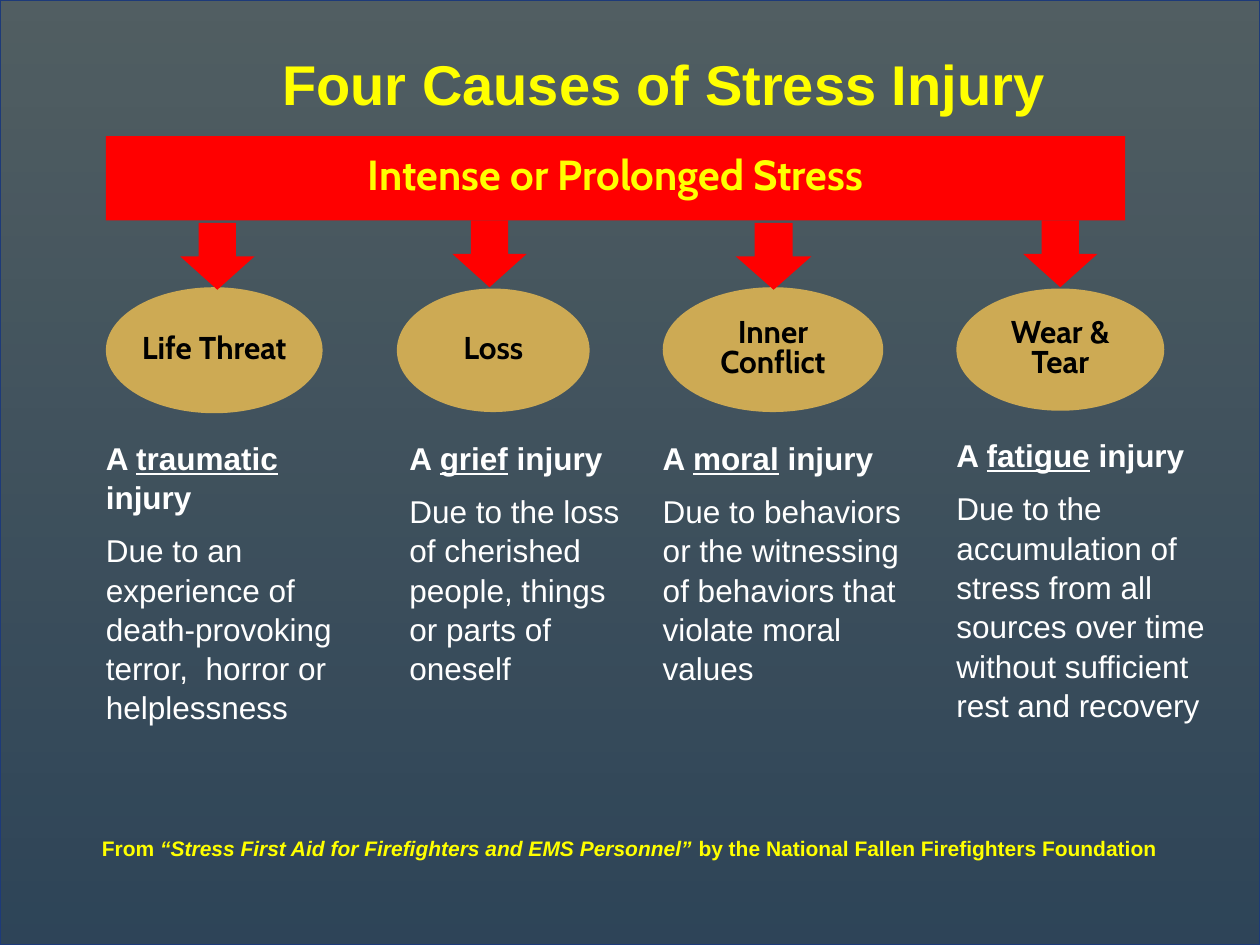
"""Build the slide on the four causes of stress injury."""
from typing import NamedTuple

from lxml.etree import SubElement
from pptx import Presentation
from pptx.dml.color import RGBColor as Rgb
from pptx.enum.shapes import MSO_SHAPE as Kind
from pptx.enum.text import MSO_ANCHOR as Anchor, PP_ALIGN as Align
from pptx.oxml.ns import qn
from pptx.util import Inches, Pt

SKY = Rgb(0xCB, 0xEC, 0xF5)
BLUE = Rgb(0x73, 0xAB, 0xDC)
NAVY = Rgb(0x1D, 0x3A, 0x79)
BLACK = Rgb(0, 0, 0)
WHITE = Rgb(0xFF, 0xFF, 0xFF)
GOLD = Rgb(0xCD, 0xAA, 0x54)
RED = Rgb(0xFF, 0, 0)
YELLOW = Rgb(0xFF, 0xFF, 0)


class Box(NamedTuple):
    left: float
    top: float
    width: float
    height: float


class Run(NamedTuple):
    text: str
    bold: bool = True
    italic: bool = False
    under: bool = False


class Cause(NamedTuple):
    name: str
    oval: Box
    arrow: Box
    note: Box
    kind: str
    detail: str
    wrap: bool = True


CAUSES = [
    Cause("Life Threat", Box(0.84, 2.28, 1.72, 1), Box(1.43, 1.77, 0.59, 0.53),
          Box(0.84, 3.47, 1.97, 2.65), "traumatic",
          "Due to an experience of death-provoking terror,  horror or helplessness"),
    Cause("Loss", Box(3.15, 2.29, 1.53, 0.98), Box(3.59, 1.75, 0.59, 0.53),
          Box(3.25, 3.47, 1.74, 1.93), "grief",
          "Due to the loss of cherished people, things or parts of oneself", False),
    Cause("Inner Conflict", Box(5.26, 2.28, 1.75, 0.99), Box(5.84, 1.77, 0.6, 0.53),
          Box(5.26, 3.47, 2.11, 1.93), "moral",
          "Due to behaviors or the witnessing of behaviors that violate moral values"),
    Cause("Wear & Tear", Box(7.59, 2.29, 1.65, 0.97), Box(8.12, 1.75, 0.59, 0.53),
          Box(7.59, 3.45, 2.16, 2.65), "fatigue",
          "Due to the accumulation of stress from all sources over time "
          "without sufficient rest and recovery"),
]


def place(box: Box) -> list:
    """Turn a box into lengths."""
    return [Inches(side) for side in box]


def draw(slide, kind, box: Box, color: Rgb):
    """Add a flat preset shape."""
    shape = slide.shapes.add_shape(kind, *place(box))
    shape.shadow.inherit = False
    shape.fill.solid()
    shape.fill.fore_color.rgb = color
    shape.line.fill.background()
    return shape


def write(shape, *lines: list[Run], size: float, color: Rgb, font: str = "Arial",
          align=Align.LEFT, anchor=Anchor.TOP, inset: float = 0,
          lead: float = 1.0, gap: float = 0, wrap: bool = True) -> None:
    """Fill a shape with paragraphs of runs in one format."""
    frame = shape.text_frame
    frame.word_wrap = wrap
    frame.vertical_anchor = anchor
    frame.margin_left = frame.margin_right = Inches(inset)
    frame.margin_top = frame.margin_bottom = Inches(inset / 2)
    for spot, line in enumerate(lines):
        para = frame.add_paragraph() if spot else frame.paragraphs[0]
        para.alignment = align
        para.line_spacing = lead
        if spot:
            para.space_before = Pt(gap)
        for part in line:
            run = para.add_run()
            run.text = part.text
            face = run.font
            face.name, face.size = font, Pt(size)
            face.bold, face.italic, face.underline = part.bold, part.italic, part.under
            face.color.rgb = color


def paint(slide) -> None:
    """Lay a dark veil over a gradient."""
    fill = slide.background.fill
    fill.gradient()
    fill.gradient_angle = 270
    for stop, color in zip(fill.gradient_stops, (SKY, BLUE)):
        stop.color.rgb = color
    veil = draw(slide, Kind.RECTANGLE, Box(0, 0, 10, 7.5), BLACK)
    tint = veil.fill._xPr.find(qn("a:solidFill"))[0]
    SubElement(tint, qn("a:alpha")).set("val", "60000")
    veil.line.color.rgb = NAVY
    veil.line.width = Pt(1.25)


def show(slide, cause: Cause) -> None:
    """Draw the oval, arrow and note of a cause."""
    oval = draw(slide, Kind.OVAL, cause.oval, GOLD)
    write(oval, [Run(cause.name)], size=18, color=BLACK, font="Cabin",
          align=Align.CENTER, anchor=Anchor.MIDDLE, lead=0.8, wrap=cause.wrap)
    draw(slide, Kind.DOWN_ARROW, cause.arrow, RED)
    note = slide.shapes.add_textbox(*place(cause.note))
    head = [Run("A "), Run(cause.kind, under=True), Run(" injury")]
    write(note, head, [Run(cause.detail, bold=False)],
          size=18, color=WHITE, lead=1.04, gap=8)


def main() -> None:
    """Build and save the slide."""
    deck = Presentation()
    deck.slide_width, deck.slide_height = Inches(10), Inches(7.5)
    slide = deck.slides.add_slide(deck.slide_layouts[6])
    paint(slide)
    title = slide.shapes.add_textbox(*place(Box(1.12, 0.21, 8.3, 0.98)))
    write(title, [Run("Four Causes of Stress Injury")], size=32, color=YELLOW,
          align=Align.CENTER, anchor=Anchor.MIDDLE, inset=0.1, lead=0.85)
    bar = draw(slide, Kind.RECTANGLE, Box(0.84, 1.08, 8.09, 0.67), RED)
    write(bar, [Run("Intense or Prolonged Stress")], size=24, color=YELLOW,
          font="Cabin", align=Align.CENTER, anchor=Anchor.MIDDLE, inset=0.1, lead=0.8)
    for cause in CAUSES:
        show(slide, cause)
    credit = slide.shapes.add_textbox(*place(Box(0.71, 6.58, 8.75, 0.3)))
    write(credit, [Run("From "),
                   Run("“Stress First Aid for Firefighters and EMS Personnel” ", italic=True),
                   Run("by the National Fallen Firefighters Foundation")],
          size=12, color=YELLOW, inset=0.1)
    deck.save("out.pptx")


if __name__ == "__main__":
    main()
